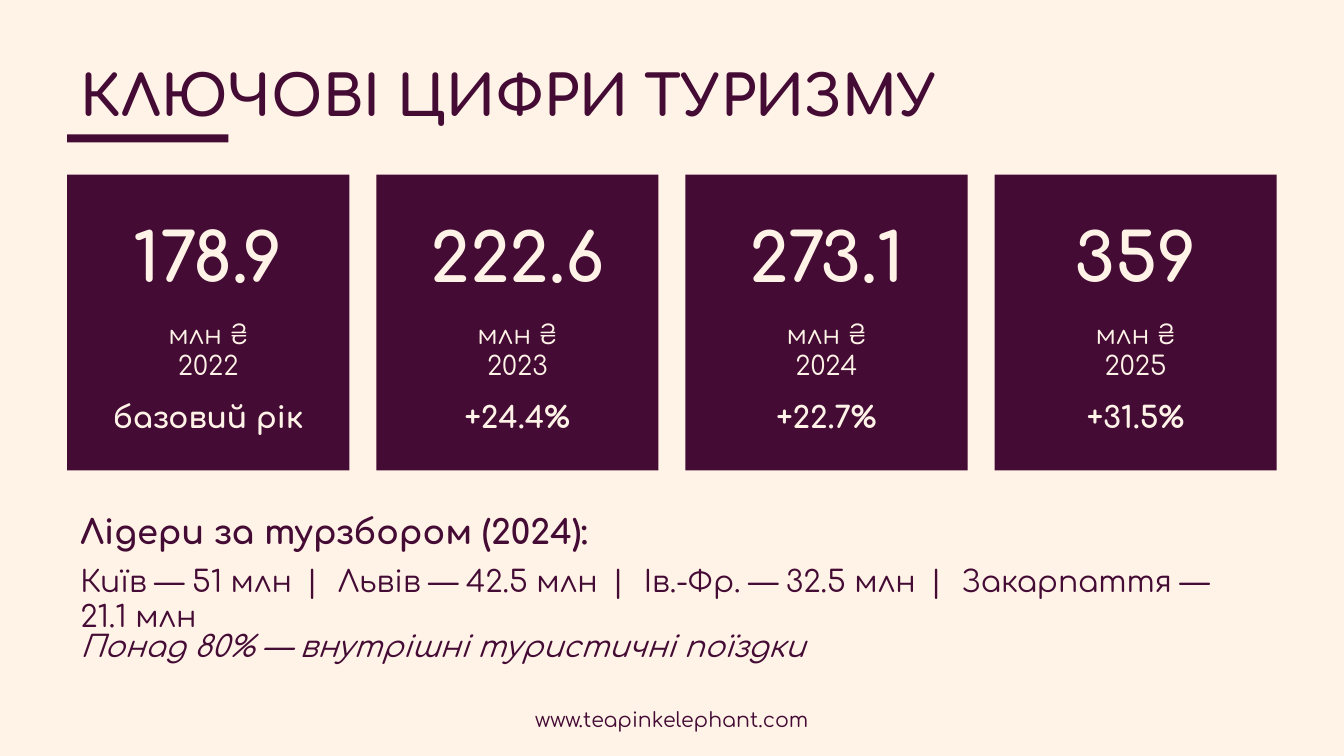
from pptx import Presentation
from pptx.dml.color import RGBColor
from pptx.enum import shapes, text
from pptx.util import Inches, Pt

FONT = "Comfortaa"
COLORS = {"plum": "440B34", "cream": "FFF2E7"}
CARDS = [
    ("178.9", "2022", "базовий рік"),
    ("222.6", "2023", "+24.4%"),
    ("273.1", "2024", "+22.7%"),
    ("359", "2025", "+31.5%"),
]
LEADERS = ["Київ — 51 млн", "Львів — 42.5 млн", "Ів.-Фр. — 32.5 млн", "Закарпаття — 21.1 млн"]
CARD_WIDTH, CARD_GAP, MARGIN = 2.1, 0.2, 0.5
CONTENT_WIDTH = 9


def rgb(name):
    """Return the palette colour called name."""
    return RGBColor.from_string(COLORS[name])


def format_text(shape, size, color, align=text.PP_ALIGN.LEFT, bold=False, italic=False):
    """Apply frame settings, alignment and font to all text of a shape."""
    frame = shape.text_frame
    frame.word_wrap = True
    frame.auto_size = text.MSO_AUTO_SIZE.NONE
    frame.vertical_anchor = text.MSO_ANCHOR.MIDDLE
    for paragraph in frame.paragraphs:
        paragraph.alignment = align
        for run in paragraph.runs:
            run.font.name = FONT
            run.font.size = Pt(size)
            run.font.bold = bold
            run.font.italic = italic
            run.font.color.rgb = rgb(color)


def add_title(slide, content):
    """Place and format the title placeholder."""
    title = slide.shapes.title
    title.left, title.top = Inches(MARGIN), Inches(0.3)
    title.width, title.height = Inches(CONTENT_WIDTH), Inches(0.8)
    title.text_frame.text = content
    format_text(title, 30, "plum", bold=True)


def add_rectangle(slide, left, top, width, height, color):
    """Add a plain filled rectangle."""
    shape = slide.shapes.add_shape(
        shapes.MSO_SHAPE.RECTANGLE, Inches(left), Inches(top), Inches(width), Inches(height)
    )
    shape.fill.solid()
    shape.fill.fore_color.rgb = rgb(color)
    shape.line.fill.background()
    shape.shadow.inherit = False
    return shape


def add_text(slide, left, top, width, height, content, size, color, **style):
    """Add a formatted text box."""
    box = slide.shapes.add_textbox(Inches(left), Inches(top), Inches(width), Inches(height))
    box.text_frame.text = content
    format_text(box, size, color, **style)


def add_card(slide, left, amount, year, change):
    """Add one yearly figure with its unit, year and change."""
    center = text.PP_ALIGN.CENTER
    add_rectangle(slide, left, 1.3, CARD_WIDTH, 2.2, "plum")
    for top, height, content, size, bold in (
        (1.4, 1, amount, 36, True),
        (2.3, 0.6, f"млн ₴\n{year}", 14, False),
        (2.9, 0.4, change, 16, True),
    ):
        add_text(slide, left, top, CARD_WIDTH, height, content, size, "cream", align=center, bold=bold)


def add_leaders(slide, leaders):
    """Add the regions in one line with widely spaced separators."""
    box = slide.shapes.add_textbox(Inches(MARGIN), Inches(4.2), Inches(CONTENT_WIDTH), Inches(0.5))
    paragraph = box.text_frame.paragraphs[0]
    for index, leader in enumerate(leaders):
        if index:
            separator = paragraph.add_run()
            separator.text = " | "
            separator.font._element.set("spc", "300")
        paragraph.add_run().text = leader
    format_text(box, 16, "plum")


def add_footer(slide, content):
    """Add the footer band with the web address."""
    footer = add_rectangle(slide, 0, 5.1, 10, 0.5, "cream")
    footer.text_frame.text = content
    format_text(footer, 11, "plum", align=text.PP_ALIGN.CENTER)


def main():
    """Build and save the slide."""
    presentation = Presentation()
    presentation.slide_width, presentation.slide_height = Inches(10), Inches(10) * 9 // 16
    slide = presentation.slides.add_slide(presentation.slide_layouts[5])
    slide.background.fill.solid()
    slide.background.fill.fore_color.rgb = rgb("cream")
    add_title(slide, "КЛЮЧОВІ ЦИФРИ ТУРИЗМУ")
    add_rectangle(slide, MARGIN, 1, 1.2, 0.06, "plum")
    for index, card in enumerate(CARDS):
        add_card(slide, MARGIN + index * (CARD_WIDTH + CARD_GAP), *card)
    add_text(slide, MARGIN, 3.7, CONTENT_WIDTH, 0.5, "Лідери за турзбором (2024):", 18, "plum", bold=True)
    add_leaders(slide, LEADERS)
    add_text(
        slide, MARGIN, 4.6, CONTENT_WIDTH, 0.4,
        "Понад 80% — внутрішні туристичні поїздки", 16, "plum", italic=True,
    )
    add_footer(slide, "www.teapinkelephant.com")
    presentation.save("out.pptx")


if __name__ == "__main__":
    main()
